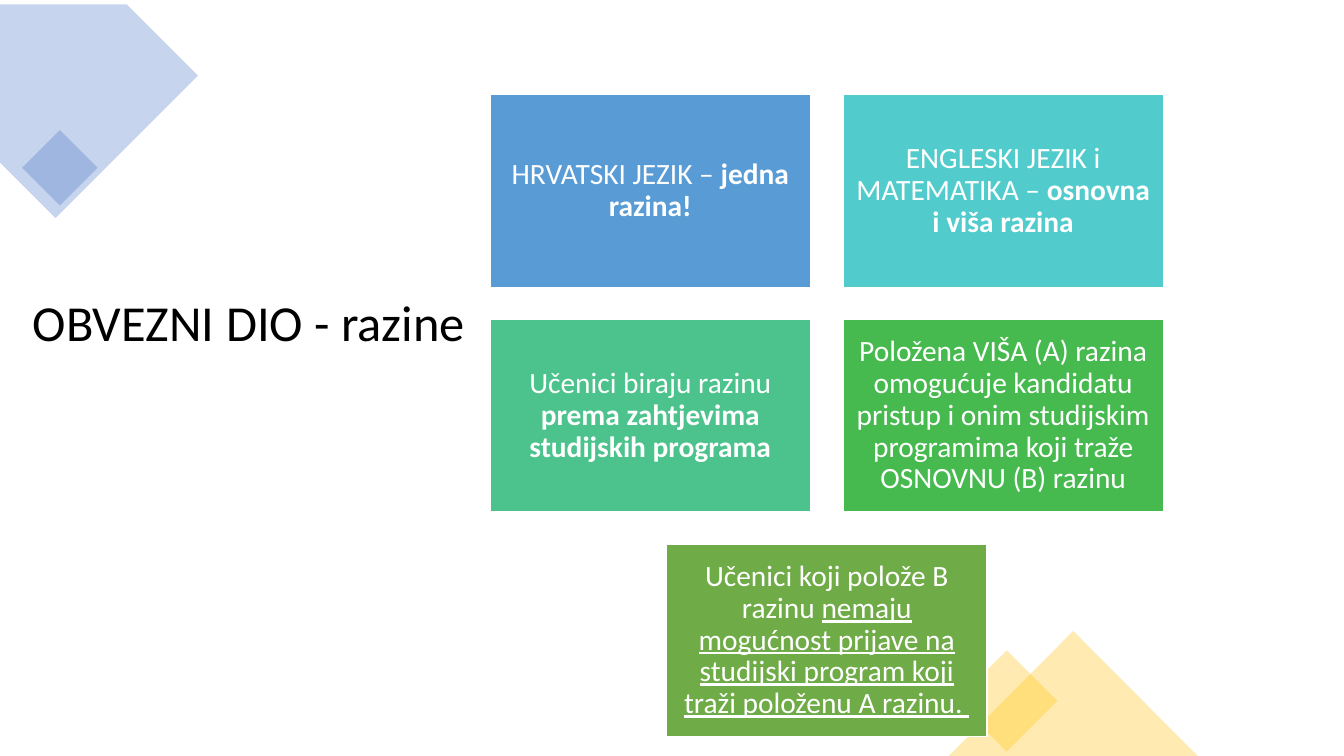
from dataclasses import dataclass

from lxml.etree import SubElement
from pptx import Presentation
from pptx.dml.color import RGBColor
from pptx.enum.shapes import MSO_SHAPE as Preset
from pptx.enum.text import MSO_ANCHOR as Anchor, PP_ALIGN as Align
from pptx.oxml.ns import qn
from pptx.shapes.autoshape import Shape
from pptx.slide import Slide
from pptx.util import Inches, Pt

COLOURS = {
    "black": "000000",
    "white": "FFFFFF",
    "indigo": "4472C4",
    "gold": "FFC000",
    "blue": "599BD5",
    "turquoise": "52CBCC",
    "mint": "4CC38C",
    "green": "46BA4E",
    "olive": "6FAB46",
}
OPACITY = 30
CARD_LEFT, CARD_TOP = 4.86, 0.94
CARD_WIDTH, CARD_HEIGHT = 3.18, 1.91
COLUMN_STEP, ROW_STEP = 3.5, 2.23
TITLE_FONT = {"name": "Calibri", "size": Pt(36)}
CARD_FONT = {"name": "Calibri", "size": Pt(21)}
BOLD = {"bold": True}
UNDERLINE = {"underline": True}


@dataclass
class Span:
    text: str
    formats: dict


@dataclass
class Card:
    column: float
    row: int
    colour: str
    spans: list[Span]


@dataclass
class Ornament:
    preset: Preset
    left: float
    top: float
    width: float
    height: float
    rotation: float
    colour: str


CARDS = [
    Card(0, 0, "blue", [Span("HRVATSKI JEZIK – ", {}), Span("jedna razina!", BOLD)]),
    Card(1, 0, "turquoise", [
        Span("ENGLESKI JEZIK i MATEMATIKA – ", {}),
        Span("osnovna i viša razina", BOLD),
    ]),
    Card(0, 1, "mint", [
        Span("Učenici biraju razinu ", {}),
        Span("prema zahtjevima studijskih programa", BOLD),
    ]),
    Card(1, 1, "green", [
        Span("Položena VIŠA (A) razina omogućuje kandidatu pristup i onim "
             "studijskim programima koji traže OSNOVNU (B) razinu", {}),
    ]),
    Card(0.5, 2, "olive", [
        Span("Učenici koji polože B razinu ", {}),
        Span("nemaju mogućnost prijave na studijski program koji traži "
             "položenu A razinu. ", UNDERLINE),
    ]),
]

ORNAMENTS = [
    Ornament(Preset.RECTANGLE, 0.33, 1.4, 0.53, 0.53, 45, "indigo"),
    Ornament(Preset.RECTANGLE, 9.63, 6.6, 0.71, 0.71, 45, "gold"),
    Ornament(Preset.ISOSCELES_TRIANGLE, 9.41, 6.26, 2.47, 1.24, 0, "gold"),
]
CORNER_OUTLINE = [(0, 0.7), (0.7, 0), (1.54, 0), (1.54, 2.05), (1.35, 2.05)]


def colour_of(name: str) -> RGBColor:
    return RGBColor.from_string(COLOURS[name])


def fill_shape(shape: Shape, colour: str) -> None:
    shape.shadow.inherit = False
    shape.fill.solid()
    shape.fill.fore_color.rgb = colour_of(colour)


def make_ornament(shape: Shape, colour: str, rotation: float) -> None:
    fill_shape(shape, colour)
    shape.line.fill.background()
    shape.rotation = rotation
    tint = shape.fill._xPr.find(qn("a:solidFill"))[0]
    SubElement(tint, qn("a:alpha")).set("val", str(OPACITY * 1000))


def write_text(shape: Shape, spans: list[Span], font: dict, colour: str,
               margins: tuple[float, float]) -> None:
    side, edge = map(Inches, margins)
    frame = shape.text_frame
    frame_formats = {
        "word_wrap": True, "vertical_anchor": Anchor.MIDDLE,
        "margin_left": side, "margin_right": side,
        "margin_top": edge, "margin_bottom": edge,
    }
    for key, value in frame_formats.items():
        setattr(frame, key, value)
    para = frame.paragraphs[0]
    para.alignment = Align.CENTER
    para.line_spacing = 0.9
    for span in spans:
        run = para.add_run()
        run.text = span.text
        run.font.color.rgb = colour_of(colour)
        for key, value in (font | span.formats).items():
            setattr(run.font, key, value)


def add_title(page: Slide) -> None:
    box = page.shapes.add_textbox(Inches(0.22), Inches(2.45), Inches(4.5), Inches(1.55))
    write_text(box, [Span("OBVEZNI DIO - razine", {})], TITLE_FONT, "black", (0.1, 0.05))


def add_corner(page: Slide) -> None:
    start, *others = CORNER_OUTLINE
    builder = page.shapes.build_freeform(*start, scale=Inches(1))
    builder.add_line_segments(others, close=True)
    make_ornament(builder.convert_to_shape(Inches(-0.45), Inches(-0.25)), "indigo", 45)


def add_ornament(page: Slide, ornament: Ornament) -> None:
    shape = page.shapes.add_shape(
        ornament.preset, Inches(ornament.left), Inches(ornament.top),
        Inches(ornament.width), Inches(ornament.height))
    make_ornament(shape, ornament.colour, ornament.rotation)


def add_card(page: Slide, card: Card) -> None:
    box = page.shapes.add_shape(
        Preset.RECTANGLE,
        Inches(CARD_LEFT + card.column * COLUMN_STEP),
        Inches(CARD_TOP + card.row * ROW_STEP),
        Inches(CARD_WIDTH), Inches(CARD_HEIGHT))
    fill_shape(box, card.colour)
    box.line.color.rgb = colour_of("white")
    box.line.width = Pt(1)
    write_text(box, card.spans, CARD_FONT, "white", (0.09, 0.09))


def main() -> None:
    deck = Presentation()
    deck.slide_width, deck.slide_height = Inches(13.33), Inches(7.5)
    page = deck.slides.add_slide(deck.slide_layouts[6])
    add_title(page)
    add_corner(page)
    for ornament in ORNAMENTS:
        add_ornament(page, ornament)
    for card in CARDS:
        add_card(page, card)
    deck.save("out.pptx")


if __name__ == "__main__":
    main()
